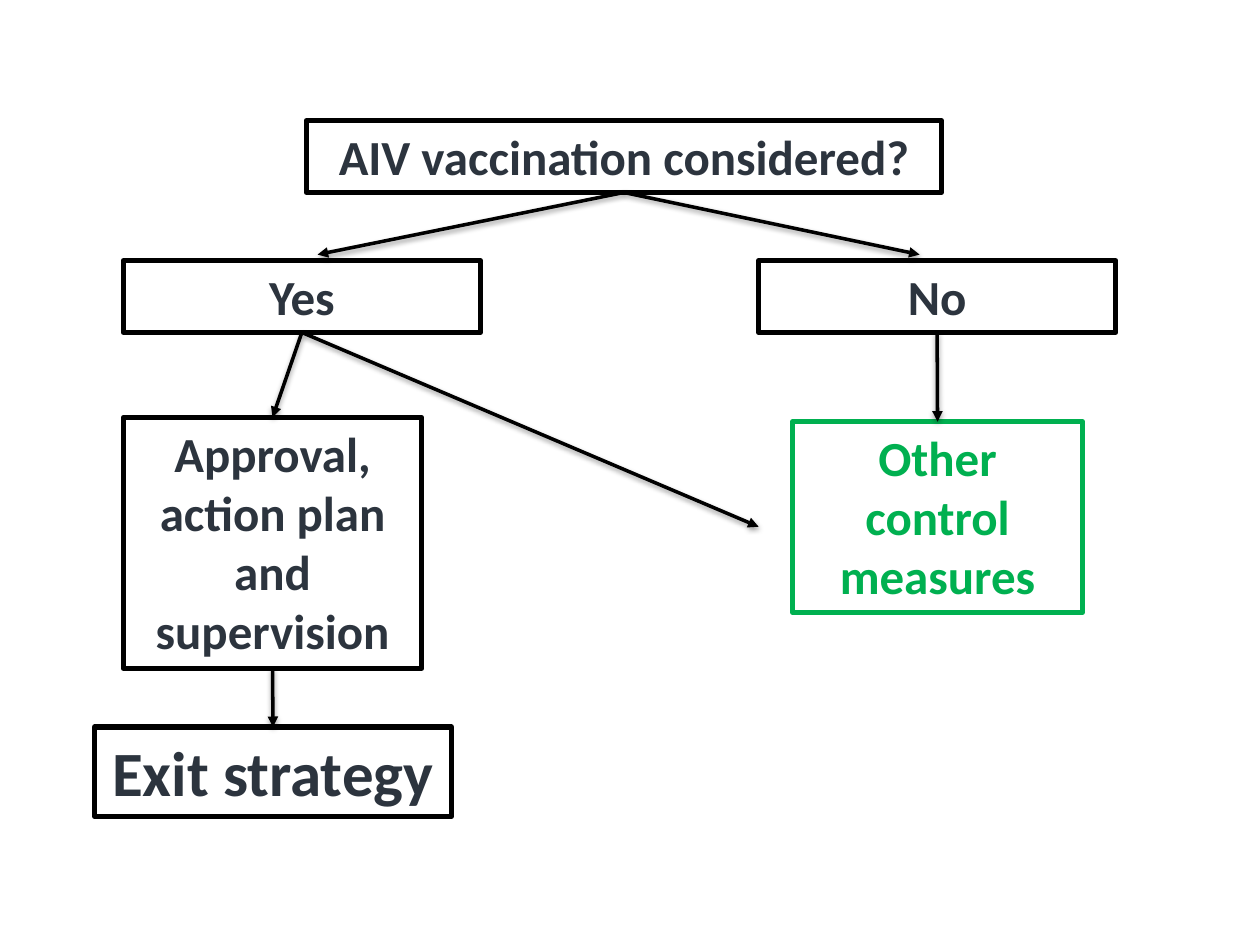
"""Build a decision flowchart on AIV vaccination."""
from lxml import etree
from pptx import Presentation
from pptx.dml.color import RGBColor
from pptx.enum import shapes, text
from pptx.oxml import ns, parse_xml
from pptx.util import Pt

BLACK, SLATE, GREEN = "000000", "2C343E", "00B050"
BOTTOM, TOP = 2, 0

BOXES = {
    "question": ("AIV vaccination considered?", (175, 69, 363, 41), 28, BLACK, SLATE),
    "yes": ("Yes", (70.5, 149, 204, 41), 28, BLACK, SLATE),
    "no": ("No", (433.5, 149, 204, 41), 28, BLACK, SLATE),
    "approval": ("Approval, action plan and supervision",
                 (70.5, 238.5, 170.5, 143.5), 28, BLACK, SLATE),
    "exit": ("Exit strategy", (54, 415.5, 204, 51), 36, BLACK, SLATE),
    "other": ("Other control measures", (453, 241, 165.5, 109), 28, GREEN, GREEN),
}
ARROWS = [
    ("question", (181.5, 145.5)),
    ("question", (525.5, 145.5)),
    ("yes", "approval"),
    ("yes", (433.5, 301)),
    ("no", "other"),
    ("approval", "exit"),
]
SHADOW = (
    f'<a:effectLst {ns.nsdecls("a")}>'
    '<a:outerShdw blurRad="40000" dist="20000" dir="5400000" rotWithShape="0">'
    '<a:srgbClr val="000000"><a:alpha val="38000"/></a:srgbClr>'
    '</a:outerShdw></a:effectLst>'
)


def color(value):
    return RGBColor.from_string(value)


def add_box(slide, label, bounds, size, line_color, font_color):
    shape = slide.shapes.add_textbox(*map(Pt, bounds))
    shape.line.color.rgb = color(line_color)
    shape.line.width = Pt(3)
    frame = shape.text_frame
    frame.word_wrap = True
    frame.auto_size = text.MSO_AUTO_SIZE.SHAPE_TO_FIT_TEXT
    paragraph = frame.paragraphs[0]
    paragraph.alignment = text.PP_ALIGN.CENTER
    run = paragraph.add_run()
    run.text = label
    run.font.name = "Calibri"
    run.font.size = Pt(size)
    run.font.bold = True
    run.font.color.rgb = color(font_color)
    return shape


def add_arrow(slide, boxes, source, target):
    end = (0, 0) if target in boxes else target
    connector = slide.shapes.add_connector(
        shapes.MSO_CONNECTOR.STRAIGHT, 0, 0, *map(Pt, end))
    connector.begin_connect(boxes[source], BOTTOM)
    if target in boxes:
        connector.end_connect(boxes[target], TOP)
    connector.line.color.rgb = color(BLACK)
    connector.line.width = Pt(2)
    line = connector.line._get_or_add_ln()
    etree.SubElement(line, ns.qn("a:tailEnd"), type="triangle")
    connector._element.spPr.append(parse_xml(SHADOW))


def main():
    presentation = Presentation()
    presentation.slide_width, presentation.slide_height = Pt(720), Pt(540)
    slide = presentation.slides.add_slide(presentation.slide_layouts[6])
    boxes = {name: add_box(slide, *box) for name, box in BOXES.items()}
    for source, target in ARROWS:
        add_arrow(slide, boxes, source, target)
    presentation.save("out.pptx")


if __name__ == "__main__":
    main()
